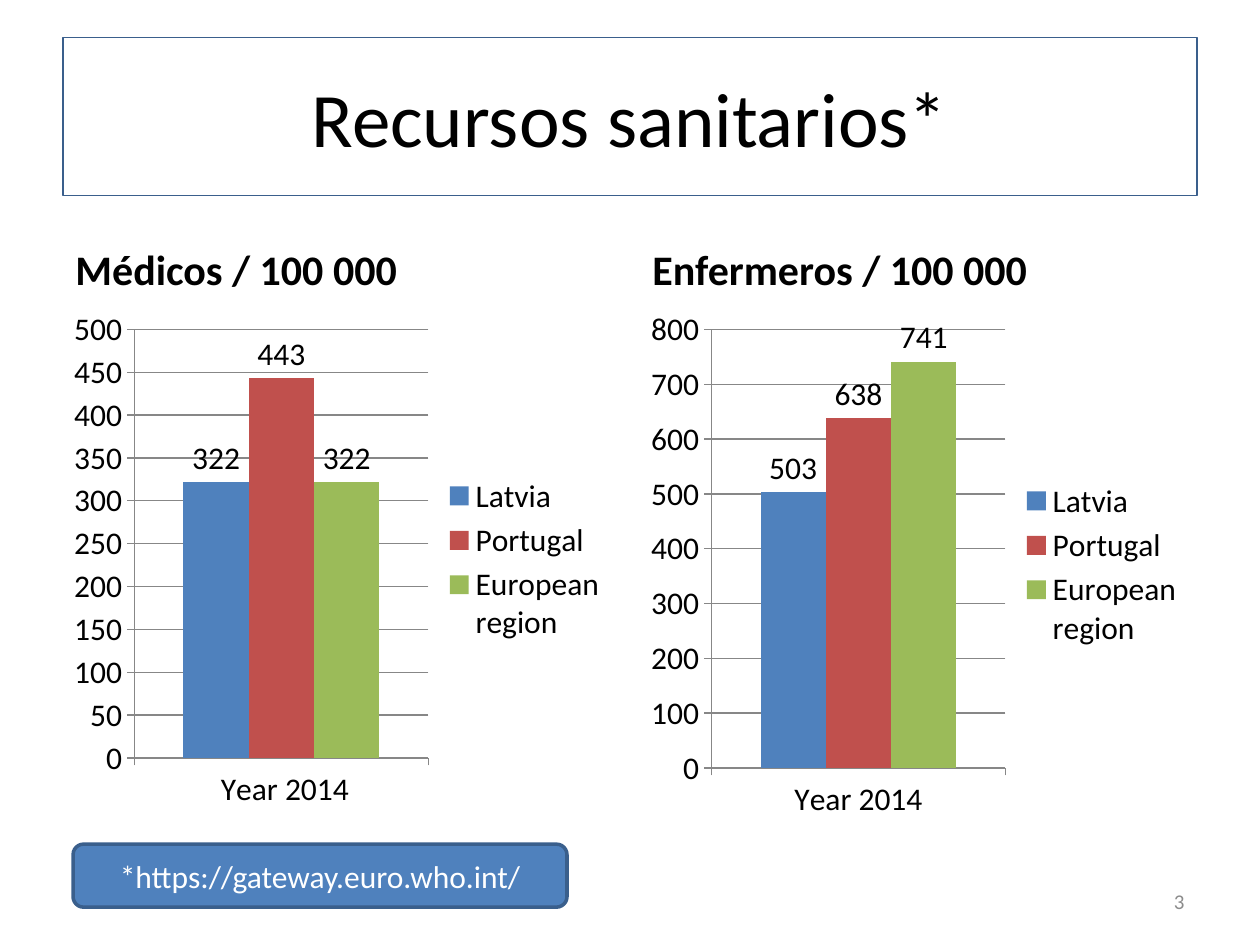
from pptx import Presentation
from pptx.chart.data import CategoryChartData
from pptx.dml.color import RGBColor
from pptx.enum.chart import XL_CHART_TYPE, XL_LABEL_POSITION, XL_LEGEND_POSITION, XL_TICK_MARK
from pptx.enum.shapes import MSO_SHAPE
from pptx.enum.text import MSO_ANCHOR, PP_ALIGN
from pptx.util import Pt

RECTANGLE, ROUNDED = MSO_SHAPE.RECTANGLE, MSO_SHAPE.ROUNDED_RECTANGLE
LEFT, CENTER, RIGHT = PP_ALIGN.LEFT, PP_ALIGN.CENTER, PP_ALIGN.RIGHT
MIDDLE, BOTTOM = MSO_ANCHOR.MIDDLE, MSO_ANCHOR.BOTTOM
COLUMNS = XL_CHART_TYPE.COLUMN_CLUSTERED
OUTSIDE_END = XL_LABEL_POSITION.OUTSIDE_END
LEGEND_RIGHT = XL_LEGEND_POSITION.RIGHT
TICK_OUTSIDE = XL_TICK_MARK.OUTSIDE

BLACK, WHITE, GRAY, AXIS_GRAY = "000000", "FFFFFF", "8C8C8C", "878787"
BLUE, DARK_BLUE = "4F81BD", "3A5F8C"
REGIONS = {"Latvia": BLUE, "Portugal": "C0504D", "European region": "9BBB59"}


def color(value):
    return RGBColor.from_string(value)


def write(shape, text, size=18, fill=BLACK, bold=False, align=LEFT, anchor=MIDDLE,
          font_name="Calibri"):
    frame = shape.text_frame
    frame.word_wrap = True
    frame.vertical_anchor = anchor
    paragraph = frame.paragraphs[0]
    paragraph.alignment = align
    run = paragraph.add_run()
    run.text = text
    run.font.name = font_name
    run.font.size = Pt(size)
    run.font.bold = bold
    run.font.color.rgb = color(fill)


class SlideBuilder:
    def __init__(self, slide, font_name="Calibri"):
        self.slide = slide
        self.font_name = font_name

    def text(self, box, text, **style):
        shape = self.slide.shapes.add_textbox(*map(Pt, box))
        write(shape, text, font_name=self.font_name, **style)

    def box(self, kind, box, text, line_width, fill=None, **style):
        shape = self.slide.shapes.add_shape(kind, *map(Pt, box))
        shape.shadow.inherit = False
        if fill:
            shape.fill.solid()
            shape.fill.fore_color.rgb = color(fill)
        else:
            shape.fill.background()
        shape.line.color.rgb = color(DARK_BLUE)
        shape.line.width = Pt(line_width)
        write(shape, text, align=CENTER, font_name=self.font_name, **style)

    def column_chart(self, box, category, values):
        data = CategoryChartData()
        data.categories = [category]
        for region, value in zip(REGIONS, values):
            data.add_series(region, [value])
        chart = self.slide.shapes.add_chart(COLUMNS, *map(Pt, box), data).chart
        chart.has_title = False
        chart.font.name = self.font_name
        chart.font.size = Pt(18)
        chart.font.color.rgb = color(BLACK)
        chart.has_legend = True
        chart.legend.position = LEGEND_RIGHT
        chart.legend.include_in_layout = False

        # Axes and gridlines
        chart.value_axis.has_major_gridlines = True
        for axis in (chart.category_axis, chart.value_axis):
            axis.major_tick_mark = TICK_OUTSIDE
            axis.format.line.color.rgb = color(AXIS_GRAY)
            axis.format.line.width = Pt(0.75)
        gridline = chart.value_axis.major_gridlines.format.line
        gridline.color.rgb = color(AXIS_GRAY)
        gridline.width = Pt(0.75)

        # Columns and their values
        plot = chart.plots[0]
        plot.gap_width = 150
        plot.overlap = 0
        plot.vary_by_categories = False
        for series, fill in zip(plot.series, REGIONS.values()):
            series.format.fill.solid()
            series.format.fill.fore_color.rgb = color(fill)
            series.data_labels.show_value = True
            series.data_labels.position = OUTSIDE_END


def main():
    presentation = Presentation()
    presentation.slide_width, presentation.slide_height = Pt(720), Pt(540)
    slide = presentation.slides.add_slide(presentation.slide_layouts[6])
    builder = SlideBuilder(slide)

    # Title
    builder.box(RECTANGLE, (36, 21.6, 648, 90), "Recursos sanitarios*", 0.75, size=44)

    # Two columns: heading above chart
    column_width = 318.24
    columns = [
        (36, "Médicos / 100 000", 296.64, " Year 2014", (322, 443, 322)),
        (365.76, "Enfermeros / 100 000", 302.4, "Year 2014", (503, 638, 741)),
    ]
    for left, heading, chart_height, category, values in columns:
        builder.text((left, 120.96, column_width, 50.4), heading,
                     size=24, bold=True, anchor=BOTTOM)
        builder.column_chart((left, 171.36, column_width, chart_height), category, values)

    # Source and slide number
    builder.box(ROUNDED, (41.76, 482.4, 282.24, 36), "*https://gateway.euro.who.int/", 2,
                fill=BLUE, size=18)
    slide.shapes[-1].text_frame.paragraphs[0].runs[0].font.color.rgb = color(WHITE)
    builder.text((516.24, 500.4, 167.76, 28.8), "3", size=12, fill=GRAY, align=RIGHT)

    presentation.save("out.pptx")


if __name__ == "__main__":
    main()
